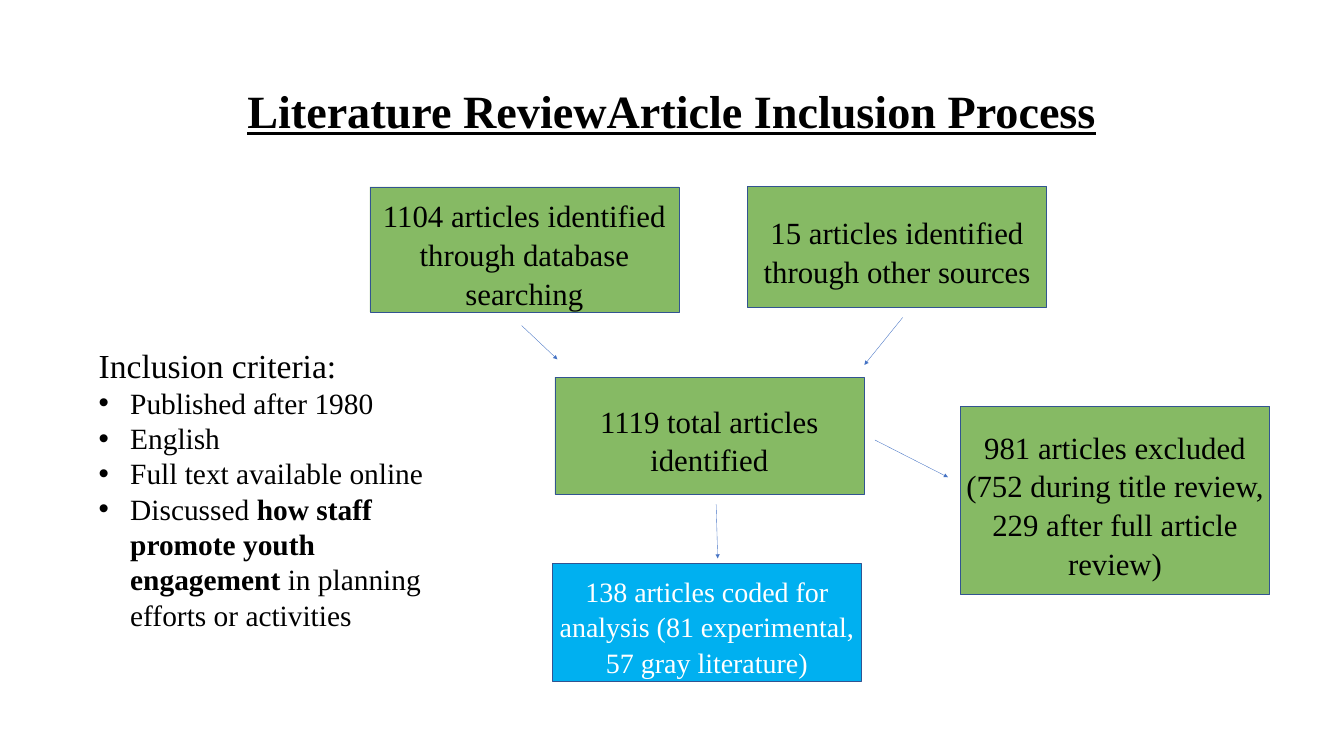
from lxml import etree
from pptx import Presentation
from pptx.dml.color import RGBColor
from pptx.enum.shapes import MSO_CONNECTOR, MSO_SHAPE
from pptx.enum.text import MSO_ANCHOR, MSO_AUTO_SIZE, PP_ALIGN
from pptx.oxml.ns import qn
from pptx.util import Pt

THEME = {
    "font": "Times New Roman",
    "black": "000000", "white": "FFFFFF", "green": "70AD47", "blue": "00B0F0",
    "border": "325491", "arrow": "4472C4", "green_alpha": 84000,
    "title": 66, "heading": 48, "box": 44, "bullet": 42, "result": 40,
}

TITLE = "Literature ReviewArticle Inclusion Process"
TITLE_AT = (131.8, 57.6, 1656, 208.8)

# text, (left, top, width, height), fill, text colour, text size
BOXES = [
    ("1104 articles identified through database searching",
     (528.5, 267.1, 441.4, 178.6), "green", "black", "box"),
    ("15 articles identified through other sources",
     (1067.8, 266.4, 427.7, 172.8), "green", "black", "box"),
    ("1119 total articles identified",
     (792.7, 538.6, 441.4, 167.8), "green", "black", "box"),
    ("981 articles excluded (752 during title review, 229 after full article review)",
     (1372.3, 580.3, 441.4, 269.3), "green", "black", "box"),
    ("138 articles coded for analysis (81 experimental, 57 gray literature)",
     (789.1, 805, 441.4, 167.8), "blue", "white", "result"),
]

# from x, from y, to x, to y
ARROWS = [
    (745.2, 465.1, 796.3, 513.4),
    (1289.5, 453.6, 1234.8, 521.3),
    (1023.1, 720.7, 1025.3, 797.8),
    (1249.9, 628.6, 1354.3, 681.8),
]

CRITERIA_AT = (133.9, 488.9, 527.8, 596.2)
CRITERIA_HEADING = "Inclusion criteria:"
# each bullet is a list of (text, bold)
CRITERIA = [
    [("Published after 1980", False)],
    [("English", False)],
    [("Full text available online", False)],
    [("Discussed ", False), ("how staff promote youth engagement ", True),
     ("in planning efforts or activities", False)],
]
BULLET_INDENT = 45


def rgb(name):
    return RGBColor.from_string(THEME[name])


def points(values):
    return [Pt(v) for v in values]


def add_run(p, text, size, color="black", **formats):
    r = p.add_run()
    r.text = text
    r.font.color.rgb = rgb(color)
    for name, value in {"name": THEME["font"], "size": Pt(THEME[size]), **formats}.items():
        setattr(r.font, name, value)


def add_title(slide):
    tf = slide.shapes.add_textbox(*points(TITLE_AT)).text_frame
    tf.word_wrap = True
    tf.vertical_anchor = MSO_ANCHOR.MIDDLE
    p = tf.paragraphs[0]
    p.alignment, p.line_spacing = PP_ALIGN.CENTER, 0.9
    add_run(p, TITLE, "title", bold=True, underline=True)


def add_box(group, text, at, fill, color, size):
    sp = group.shapes.add_shape(MSO_SHAPE.RECTANGLE, *points(at))
    sp.shadow.inherit = False
    sp.fill.solid()
    sp.fill.fore_color.rgb = rgb(fill)
    if fill == "green":
        srgb = sp.fill._xPr.find(".//" + qn("a:srgbClr"))
        etree.SubElement(srgb, qn("a:alpha"), val=str(THEME["green_alpha"]))
    sp.line.color.rgb = rgb("border")
    sp.line.width = Pt(1)
    tf = sp.text_frame
    tf.word_wrap = True
    tf.vertical_anchor = MSO_ANCHOR.MIDDLE
    tf.margin_top = Pt(13.6)
    p = tf.paragraphs[0]
    p.alignment, p.line_spacing = PP_ALIGN.CENTER, 1.05
    add_run(p, text, size, color)


def add_arrow(group, ends):
    line = group.shapes.add_connector(MSO_CONNECTOR.STRAIGHT, *points(ends))
    line.line.color.rgb = rgb("arrow")
    line.line.width = Pt(0.5)
    etree.SubElement(line.line._get_or_add_ln(), qn("a:tailEnd"), type="triangle")
    etree.SubElement(line._element.spPr, qn("a:effectLst"))


def add_criteria(slide):
    tf = slide.shapes.add_textbox(*points(CRITERIA_AT)).text_frame
    tf.word_wrap = True
    tf.auto_size = MSO_AUTO_SIZE.SHAPE_TO_FIT_TEXT
    add_run(tf.paragraphs[0], CRITERIA_HEADING, "heading")
    for runs in CRITERIA:
        p = tf.add_paragraph()
        pPr = p._p.get_or_add_pPr()
        pPr.set("marL", str(Pt(BULLET_INDENT)))
        pPr.set("indent", str(Pt(-BULLET_INDENT)))
        etree.SubElement(pPr, qn("a:buFont"), typeface="Arial")
        etree.SubElement(pPr, qn("a:buChar"), char="•")
        for text, bold in runs:
            add_run(p, text, "bullet", bold=bold)


def main():
    prs = Presentation()
    prs.slide_width, prs.slide_height = Pt(1920), Pt(1080)
    slide = prs.slides.add_slide(prs.slide_layouts[6])
    add_title(slide)
    flow = slide.shapes.add_group_shape()
    for box in BOXES:
        add_box(flow, *box)
    for ends in ARROWS:
        add_arrow(flow, ends)
    add_criteria(slide)
    prs.save("out.pptx")


if __name__ == "__main__":
    main()
